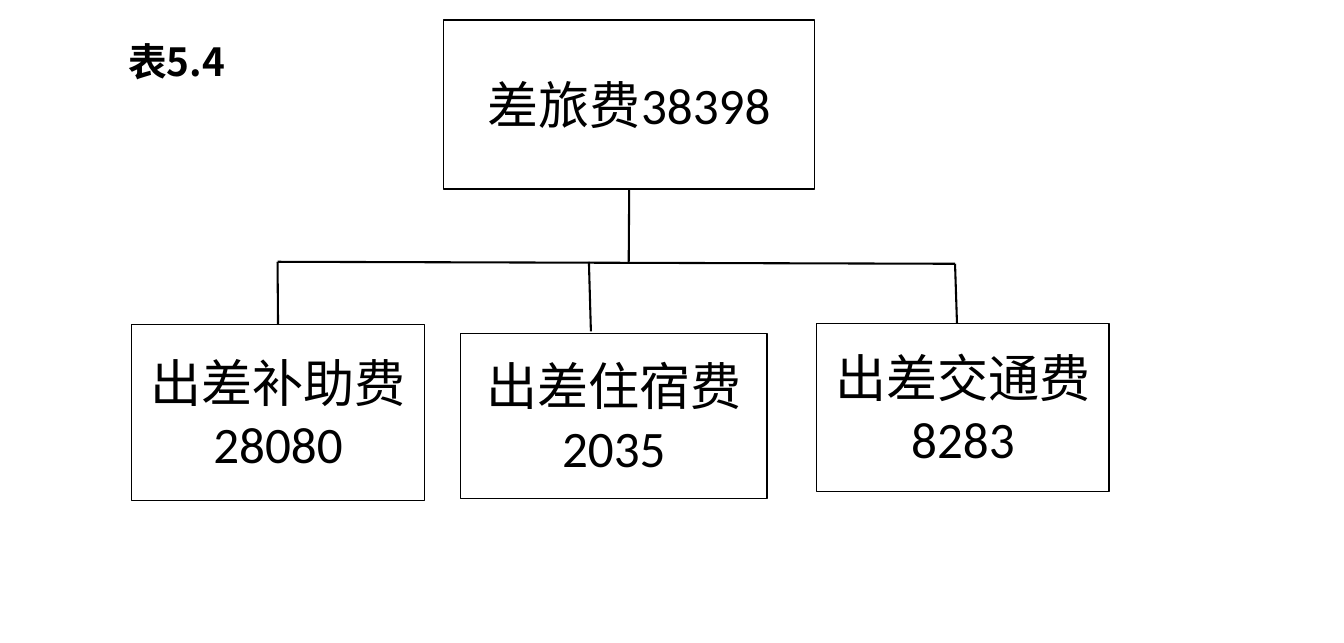
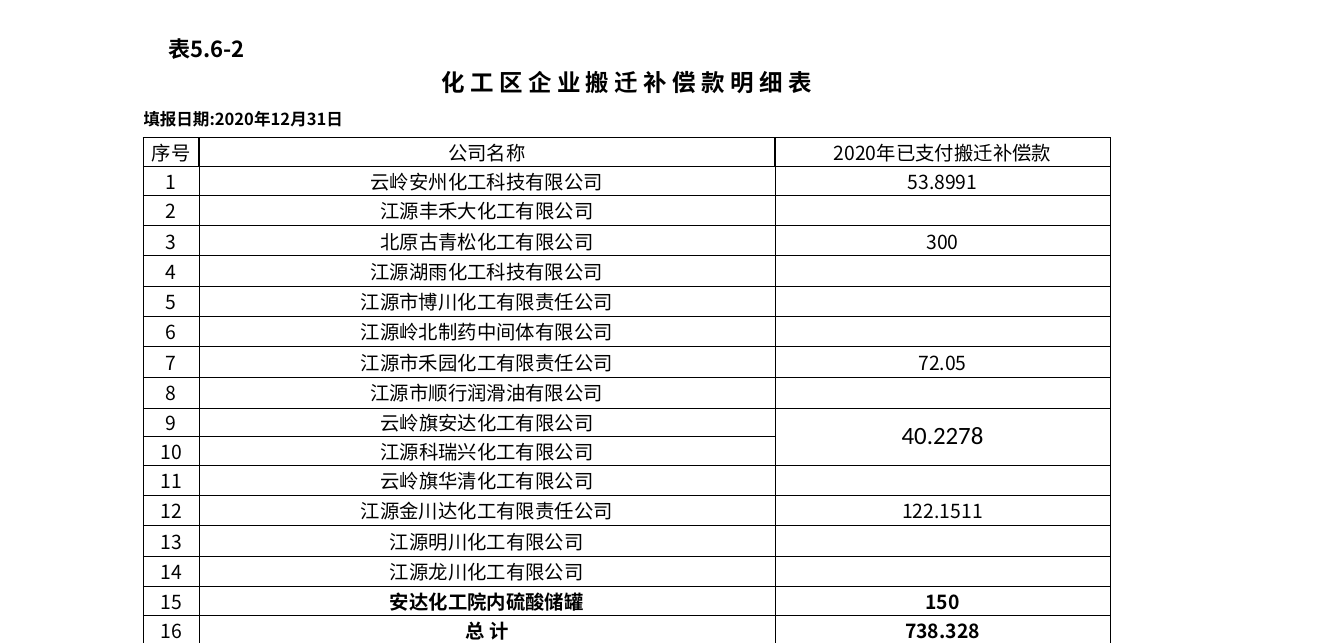
from dataclasses import dataclass

from lxml import etree
from pptx import Presentation
from pptx.dml.color import RGBColor
from pptx.enum.shapes import MSO_CONNECTOR, MSO_SHAPE
from pptx.enum.text import MSO_ANCHOR, MSO_AUTO_SIZE, PP_ALIGN
from pptx.oxml.ns import qn
from pptx.util import Inches, Pt

STRAIGHT = MSO_CONNECTOR.STRAIGHT
RECTANGLE = MSO_SHAPE.RECTANGLE
LEFT, CENTER = PP_ALIGN.LEFT, PP_ALIGN.CENTER
TOP, MIDDLE = MSO_ANCHOR.TOP, MSO_ANCHOR.MIDDLE
NO_AUTOFIT = MSO_AUTO_SIZE.NONE
SIDE_TOP, SIDE_BOTTOM = 0, 2
TITLE_ONLY, BLANK = 5, 6

COLORS = {"ink": "000000", "paper": "FFFFFF"}
LATIN_FONT = "Calibri"
CHINESE_FONT = "Noto Sans CJK SC"


@dataclass
class CostBox:
    text: str
    left: float
    top: float
    width: float
    height: float


@dataclass
class Branch:
    box: CostBox
    start: tuple[float, float]
    end: tuple[float, float]
    joined: bool = False


@dataclass
class TextStyle:
    size: float = 14
    bold: bool = False
    font: str = CHINESE_FONT
    align: PP_ALIGN = CENTER


@dataclass
class Company:
    name: str
    amount: str = ""
    bold: bool = False


TOTAL_COST = CostBox("差旅费38398", 4.46, 0.2, 3.73, 1.7)
BRANCHES = [
    Branch(CostBox("出差补助费28080", 1.32, 3.26, 2.95, 1.77),
           (2.79, 2.63), (2.79, 3.26), joined=True),
    Branch(CostBox("出差住宿费2035", 4.63, 3.35, 3.08, 1.66),
           (5.92, 2.63), (5.94, 3.33)),
    Branch(CostBox("出差交通费8283", 8.21, 3.25, 2.94, 1.69),
           (9.6, 2.65), (9.62, 3.25)),
]

COMPANIES = [
    Company("云岭安州化工科技有限公司", "53.8991"),
    Company("江源丰禾大化工有限公司"),
    Company("北原古青松化工有限公司", "300"),
    Company("江源湖雨化工科技有限公司"),
    Company("江源市博川化工有限责任公司"),
    Company("江源岭北制药中间体有限公司"),
    Company("江源市禾园化工有限责任公司", "72.05"),
    Company("江源市顺行润滑油有限公司"),
    Company("云岭旗安达化工有限公司", "40.2278"),
    Company("江源科瑞兴化工有限公司"),
    Company("云岭旗华清化工有限公司"),
    Company("江源金川达化工有限责任公司", "122.1511"),
    Company("江源明川化工有限公司"),
    Company("江源龙川化工有限公司"),
    Company("安达化工院内硫酸储罐", "150", bold=True),
    Company("总 计", "738.328", bold=True),
]
COLUMN_WIDTHS = [0.56, 5.79, 3.37]
ROW_HEIGHTS = [0.32, 0.34, 0.4, 0.29, 0.28, 0.31, 0.3, 0.31, 0.3, 0.3,
               0.31, 0.31, 0.28, 0.29, 0.3, 0.31, 0.31, 0.3, 0.29, 0.29]
HEADER_ROW = 3
SHARED_AMOUNT_ROW = HEADER_ROW + 9


def color(name: str) -> RGBColor:
    return RGBColor.from_string(COLORS[name])


def style_paragraph(paragraph, style: TextStyle) -> None:
    paragraph.alignment = style.align
    font = paragraph.font
    font.name, font.size, font.bold = style.font, Pt(style.size), style.bold
    font.color.rgb = color("ink")


# Organisation chart parts
def add_box(slide, box: CostBox):
    shape = slide.shapes.add_shape(RECTANGLE, Inches(box.left), Inches(box.top),
                                   Inches(box.width), Inches(box.height))
    shape.shadow.inherit = False
    shape.fill.solid()
    shape.fill.fore_color.rgb = color("paper")
    shape.line.color.rgb = color("ink")
    shape.line.width = Pt(1)
    frame = shape.text_frame
    frame.word_wrap = True
    frame.vertical_anchor = MIDDLE
    frame.text = box.text
    style_paragraph(frame.paragraphs[0], TextStyle(37, font=LATIN_FONT))
    return shape


def add_line(slide, start: tuple[float, float], end: tuple[float, float]):
    connector = slide.shapes.add_connector(
        STRAIGHT, *(Inches(value) for value in (*start, *end)))
    connector.line.color.rgb = color("ink")
    connector.line.width = Pt(1.5)
    etree.SubElement(connector._element.spPr, qn("a:effectLst"))
    return connector


def build_cost_slide(presentation) -> None:
    slide = presentation.slides.add_slide(presentation.slide_layouts[TITLE_ONLY])

    # Table number as the title
    title = slide.shapes.title
    title.left, title.top = Inches(1.19), Inches(0.41)
    title.width, title.height = Inches(1.18), Inches(1.04)
    frame = title.text_frame
    frame.word_wrap = True
    frame.auto_size = NO_AUTOFIT
    frame.vertical_anchor = TOP
    frame.text = "表5.4"
    style_paragraph(frame.paragraphs[0], TextStyle(28, bold=True, align=LEFT))
    frame.paragraphs[0].line_spacing = 0.83

    # Total, trunk and crossbar
    total = add_box(slide, TOTAL_COST)
    add_line(slide, BRANCHES[0].start, BRANCHES[-1].start)
    trunk = add_line(slide, (6.32, 1.9), (6.32, 2.64))
    trunk.begin_connect(total, SIDE_BOTTOM)

    # Cost items
    for branch in BRANCHES:
        shape = add_box(slide, branch.box)
        drop = add_line(slide, branch.start, branch.end)
        if branch.joined:
            drop.end_connect(shape, SIDE_TOP)


# Table parts
def set_borders(cell, sides: str, width: float) -> None:
    properties = cell._tc.get_or_add_tcPr()
    for side in sides:
        line = etree.SubElement(properties, qn(f"a:ln{side}"), w=str(Pt(width)))
        fill = etree.SubElement(line, qn("a:solidFill"))
        etree.SubElement(fill, qn("a:srgbClr"), val=COLORS["ink"])


def fill_cell(cell, text: str, style: TextStyle) -> None:
    cell.margin_left = cell.margin_right = 0
    cell.margin_top = cell.margin_bottom = 0
    cell.vertical_anchor = MIDDLE
    cell.text = text
    style_paragraph(cell.text_frame.paragraphs[0], style)


def build_company_slide(presentation) -> None:
    slide = presentation.slides.add_slide(presentation.slide_layouts[BLANK])
    table = slide.shapes.add_table(
        len(ROW_HEIGHTS), len(COLUMN_WIDTHS), Inches(1.44), Inches(0.32),
        Inches(sum(COLUMN_WIDTHS)), Inches(sum(ROW_HEIGHTS))).table
    table.first_row = table.horz_banding = False
    for column, width in zip(table.columns, COLUMN_WIDTHS):
        column.width = Inches(width)
    for row, height in zip(table.rows, ROW_HEIGHTS):
        row.height = Inches(height)

    # Headings, column names and companies
    plain = TextStyle()
    rows = [
        (("表5.6-2", "", ""), [TextStyle(16, True, align=LEFT)] * 3),
        (("化 工 区 企 业 搬 迁 补 偿 款 明 细 表", "", ""),
         [TextStyle(17, True)] * 3),
        (("填报日期:2020年12月31日", "", ""),
         [TextStyle(12, True, align=LEFT)] * 3),
        (("序号", "公司名称", "2020年已支付搬迁补偿款"), [plain] * 3),
    ]
    for number, company in enumerate(COMPANIES, start=1):
        style = TextStyle(bold=company.bold)
        rows.append(((str(number), company.name, company.amount),
                     [plain, style, style]))
    rows[SHARED_AMOUNT_ROW][1][2] = TextStyle(18, font=LATIN_FONT)

    for row_index, (texts, styles) in enumerate(rows):
        for column_index, (text, style) in enumerate(zip(texts, styles)):
            cell = table.cell(row_index, column_index)
            fill_cell(cell, text, style)
            if row_index == HEADER_ROW - 1:
                set_borders(cell, "B", 1)
            elif row_index >= HEADER_ROW:
                set_borders(cell, "LRTB", 1 if row_index == HEADER_ROW else 0.5)
            cell.fill.background()

    # Merged cells
    for row_index, last_column in enumerate((2, 2, 1)):
        table.cell(row_index, 0).merge(table.cell(row_index, last_column))
    table.cell(SHARED_AMOUNT_ROW, 2).merge(table.cell(SHARED_AMOUNT_ROW + 1, 2))
    table.cell(0, 0).margin_left = Inches(0.25)


def main() -> None:
    presentation = Presentation()
    presentation.slide_width = Inches(13.51)
    presentation.slide_height = Inches(6.46)
    build_cost_slide(presentation)
    build_company_slide(presentation)
    presentation.save("out.pptx")


if __name__ == "__main__":
    main()
